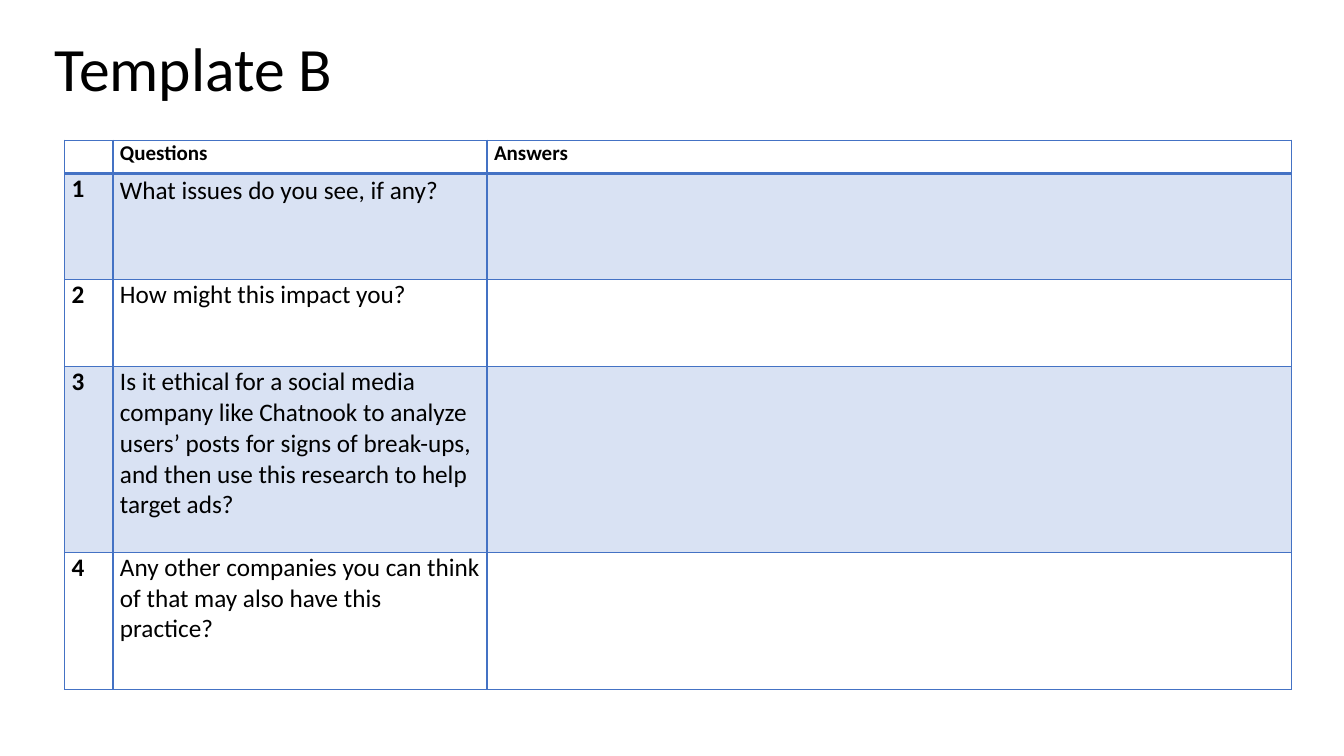
from collections import namedtuple
from dataclasses import dataclass

from lxml.etree import SubElement
from pptx import Presentation
from pptx.dml.color import RGBColor
from pptx.enum.text import MSO_ANCHOR, PP_ALIGN
from pptx.oxml.ns import qn
from pptx.util import Inches, Pt

Box = namedtuple("Box", "left top width height")
Question = namedtuple("Question", "wording row_height line_spacing")


@dataclass(frozen=True)
class Theme:
    font: str = "Calibri"
    text: str = "000000"
    accent: str = "4472C4"
    band_opacity: int = 20
    title_size: int = 44
    header_size: int = 15
    body_size: int = 18
    border: int = 1
    header_rule: int = 2


THEME = Theme()
TITLE_BOX = Box(0.44, 0.22, 12.44, 0.98)
TABLE_BOX = Box(0.64, 1.39, 12.17, 5.45)
COLUMN_WIDTHS = (0.48, 3.71, 7.98)
HEADER_HEIGHT = 0.33
CELL_INSET = 0.07
HEADERS = ("", "Questions", "Answers")
QUESTIONS = (
    Question("What issues do you see, if any?", 1.05, 1.07),
    Question("How might this impact you?", 0.87, 1),
    Question(
        "Is it ethical for a social media company like Chatnook to analyze "
        "users’ posts for signs of break-ups, and then use this research to "
        "help target ads?", 1.84, 1),
    Question(
        "Any other companies you can think of that may also have this "
        "practice?", 1.36, 1),
)


def format_paragraph(paragraph, size, bold=False, line_spacing=1):
    paragraph.alignment = PP_ALIGN.LEFT
    paragraph.line_spacing = line_spacing
    paragraph.font.name = THEME.font
    paragraph.font.size = Pt(size)
    paragraph.font.bold = bold
    paragraph.font.color.rgb = RGBColor.from_string(THEME.text)


def set_borders(cell, top, bottom):
    properties = cell._tc.get_or_add_tcPr()
    widths = {"a:lnL": THEME.border, "a:lnR": THEME.border,
              "a:lnT": top, "a:lnB": bottom}
    for side, width in widths.items():
        line = SubElement(properties, qn(side), w=str(Pt(width)))
        fill = SubElement(line, qn("a:solidFill"))
        SubElement(fill, qn("a:srgbClr"), val=THEME.accent)


def set_band(cell):
    cell.fill.solid()
    cell.fill.fore_color.rgb = RGBColor.from_string(THEME.accent)
    color = cell._tc.tcPr.find(qn("a:solidFill")).find(qn("a:srgbClr"))
    SubElement(color, qn("a:alpha"), val=str(THEME.band_opacity * 1000))


def add_title(slide, box, wording):
    title = slide.shapes.title
    title.left, title.top, title.width, title.height = map(Inches, box)
    title.text_frame.text = wording
    title.text_frame.vertical_anchor = MSO_ANCHOR.MIDDLE
    format_paragraph(title.text_frame.paragraphs[0], THEME.title_size,
                     line_spacing=0.9)


def fill_cell(cell, wording, size, bold, line_spacing):
    cell.margin_left = cell.margin_right = Inches(CELL_INSET)
    cell.margin_top = cell.margin_bottom = 0
    cell.text = wording
    format_paragraph(cell.text_frame.paragraphs[0], size, bold, line_spacing)


def add_question_table(slide, box):
    table = slide.shapes.add_table(
        len(QUESTIONS) + 1, len(HEADERS), *map(Inches, box)).table
    table.first_row = table.horz_banding = False
    for column, width in zip(table.columns, COLUMN_WIDTHS):
        column.width = Inches(box.width * width / sum(COLUMN_WIDTHS))

    heights = [HEADER_HEIGHT] + [item.row_height for item in QUESTIONS]
    for row, height in zip(table.rows, heights):
        row.height = Inches(box.height * height / sum(heights))

    for column, header in enumerate(HEADERS):
        fill_cell(table.cell(0, column), header, THEME.header_size, True, 1)
    for number, question in enumerate(QUESTIONS, 1):
        for column, wording in enumerate((str(number), question.wording, "")):
            spacing = question.line_spacing if column == 1 else 1
            fill_cell(table.cell(number, column), wording, THEME.body_size,
                      column == 0, spacing)

    for index, row in enumerate(table.rows):
        top = THEME.header_rule if index == 1 else THEME.border
        bottom = THEME.header_rule if index == 0 else THEME.border
        for cell in row.cells:
            set_borders(cell, top, bottom)
            if index % 2:
                set_band(cell)
            else:
                cell.fill.background()


def main():
    presentation = Presentation()
    presentation.slide_width = Inches(13.33)
    presentation.slide_height = Inches(7.5)
    slide = presentation.slides.add_slide(presentation.slide_layouts[5])
    add_title(slide, TITLE_BOX, "Template B")
    add_question_table(slide, TABLE_BOX)
    presentation.save("out.pptx")


if __name__ == "__main__":
    main()
